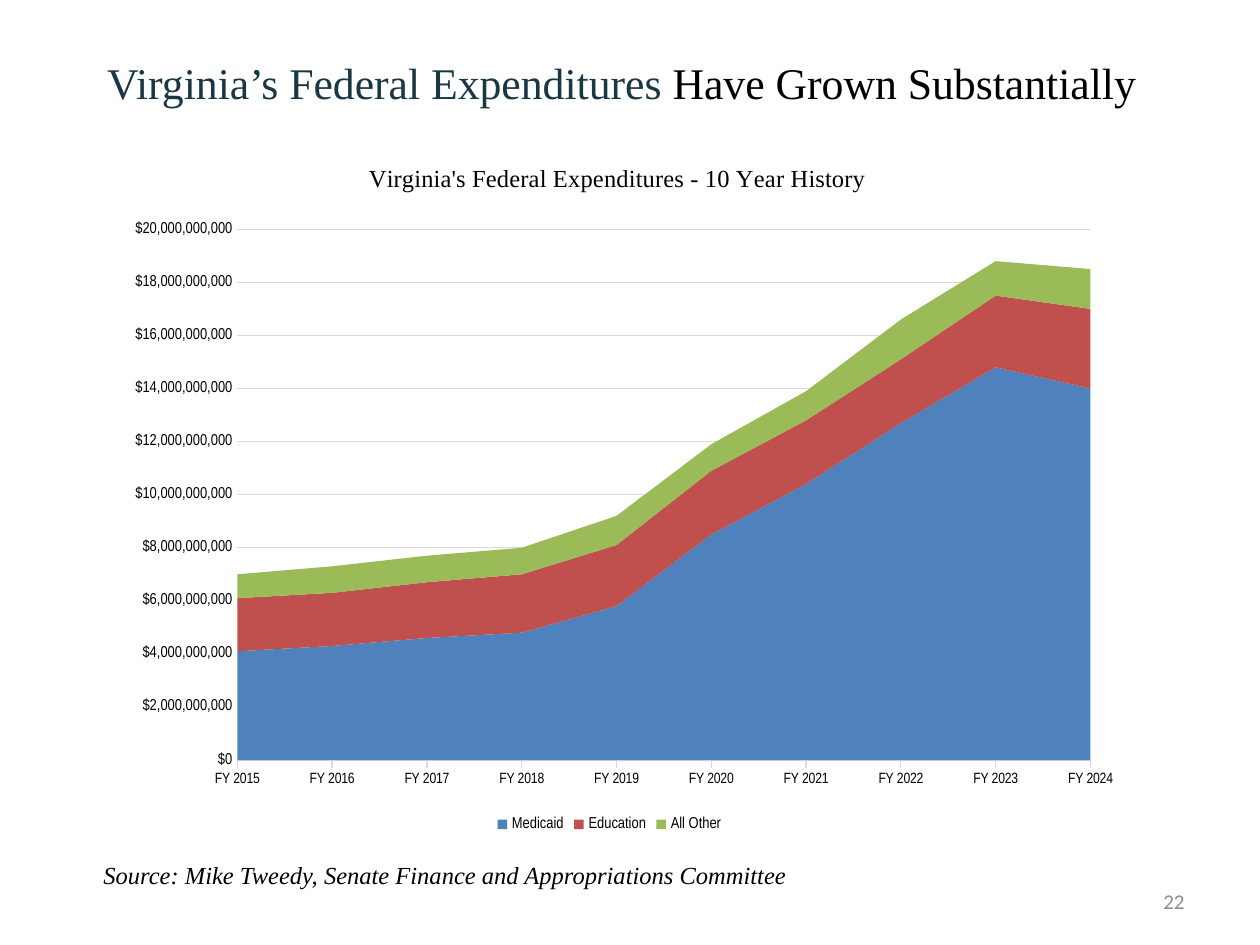
from lxml import etree
from pptx import Presentation
from pptx.chart.data import CategoryChartData
from pptx.dml.color import RGBColor
from pptx.enum import chart as kinds, text
from pptx.oxml import ns
from pptx.util import Pt

BLACK = RGBColor(0x00, 0x00, 0x00)
NAVY = RGBColor(0x1A, 0x37, 0x44)
GRAY = RGBColor(0x8C, 0x8C, 0x8C)
GRID = RGBColor(0xD9, 0xD9, 0xD9)
BLUE = RGBColor(0x4F, 0x81, 0xBD)
RED = RGBColor(0xC0, 0x50, 0x4D)
GREEN = RGBColor(0x9B, 0xBB, 0x59)
SERIF = "Times New Roman"
NARROW = "Arial Narrow"


def style(font, name, size, color):
    font.name, font.size, font.bold = name, Pt(size), False
    font.color.rgb = color


def place(parent, index, **values):
    """Give a chart part a manual layout, as fractions of the chart."""
    for old in parent.findall(ns.qn("c:layout")):
        parent.remove(old)
    layout = etree.Element(ns.qn("c:layout"))
    manual = etree.SubElement(layout, ns.qn("c:manualLayout"))
    for tag, value in values.items():
        etree.SubElement(manual, ns.qn("c:" + tag)).set("val", str(value))
    parent.insert(index, layout)


deck = Presentation()
deck.slide_width, deck.slide_height = Pt(720), Pt(540)
page = deck.slides.add_slide(deck.slide_layouts[5])

# Title
title = page.shapes.title
title.left, title.top, title.width, title.height = Pt(54), Pt(26), Pt(697), Pt(48)
frame = title.text_frame
frame.auto_size = text.MSO_AUTO_SIZE.NONE
frame.vertical_anchor = text.MSO_ANCHOR.TOP
frame.margin_top = Pt(6)
para = frame.paragraphs[0]
para.alignment = text.PP_ALIGN.LEFT
for words, color in [("Virginia’s Federal Expenditures", NAVY),
                     (" Have Grown Substantially", BLACK)]:
    span = para.add_run()
    span.text = words
    style(span.font, SERIF, 25, color)

# Expenditures in billions of dollars, by fiscal year
expenditures = [
    ("Medicaid", BLUE, [4.1, 4.3, 4.6, 4.8, 5.8, 8.5, 10.4, 12.7, 14.8, 14]),
    ("Education", RED, [2, 2, 2.1, 2.2, 2.3, 2.4, 2.4, 2.4, 2.7, 3]),
    ("All Other", GREEN, [0.9, 1, 1, 1, 1.1, 1, 1.1, 1.5, 1.3, 1.5]),
]
data = CategoryChartData(number_format='"$"#,##0')
data.categories = [f"FY {year}" for year in range(2015, 2025)]
for name, color, billions in expenditures:
    data.add_series(name, [round(value * 1e9) for value in billions])
chart = page.shapes.add_chart(kinds.XL_CHART_TYPE.AREA_STACKED, Pt(30), Pt(74),
                              Pt(636.5), Pt(404.5), data).chart
style(chart.font, NARROW, 10, BLACK)
for series, (name, color, billions) in zip(chart.plots[0].series, expenditures):
    series.format.fill.solid()
    series.format.fill.fore_color.rgb = color

# Chart title
chart.has_title = True
span = chart.chart_title.text_frame.paragraphs[0].add_run()
span.text = "Virginia's Federal Expenditures - 10 Year History"
style(span.font, SERIF, 14, BLACK)
place(chart.chart_title._element, 1, xMode="edge", yMode="edge", x=0.28, y=0.04)

# Axes
years = chart.category_axis
years.has_major_gridlines = False
years.major_tick_mark = kinds.XL_TICK_MARK.OUTSIDE
years.format.line.color.rgb = GRID
years.format.line.width = Pt(0.75)
style(years.tick_labels.font, NARROW, 8.5, BLACK)

dollars = chart.value_axis
dollars.minimum_scale, dollars.maximum_scale, dollars.major_unit = 0, 20e9, 2e9
dollars.major_tick_mark = kinds.XL_TICK_MARK.NONE
dollars.format.line.fill.background()
dollars.major_gridlines.format.line.color.rgb = GRID
dollars.major_gridlines.format.line.width = Pt(0.75)
dollars.tick_labels.number_format = '"$"#,##0;\\("$"#,##0\\)'
dollars.tick_labels.number_format_is_linked = False
style(dollars.tick_labels.font, NARROW, 9, BLACK)
dollars._element.find(ns.qn("c:crossBetween")).set("val", "midCat")

plot_area = chart._chartSpace.chart.plotArea
place(plot_area, 0, layoutTarget="inner", xMode="edge", yMode="edge",
      x=0.166, y=0.141, w=0.766, h=0.75)

# Legend
chart.has_legend = True
chart.legend.position = kinds.XL_LEGEND_POSITION.BOTTOM
chart.legend.include_in_layout = False
style(chart.legend.font, NARROW, 9, BLACK)

# Source line and page number
notes = [
    ("Source: Mike Tweedy, Senate Finance and Appropriations Committee",
     (52, 488, 540, 24.5), SERIF, 14, BLACK, True,
     text.PP_ALIGN.LEFT, text.MSO_ANCHOR.TOP),
    ("22", (516, 500.5, 168, 28.75), "Calibri", 12, GRAY, False,
     text.PP_ALIGN.RIGHT, text.MSO_ANCHOR.MIDDLE),
]
for words, area, face, size, color, italic, align, anchor in notes:
    box = page.shapes.add_textbox(*[Pt(length) for length in area])
    box.text_frame.word_wrap = True
    box.text_frame.vertical_anchor = anchor
    para = box.text_frame.paragraphs[0]
    para.alignment = align
    span = para.add_run()
    span.text = words
    style(span.font, face, size, color)
    span.font.italic = italic

deck.save("out.pptx")
